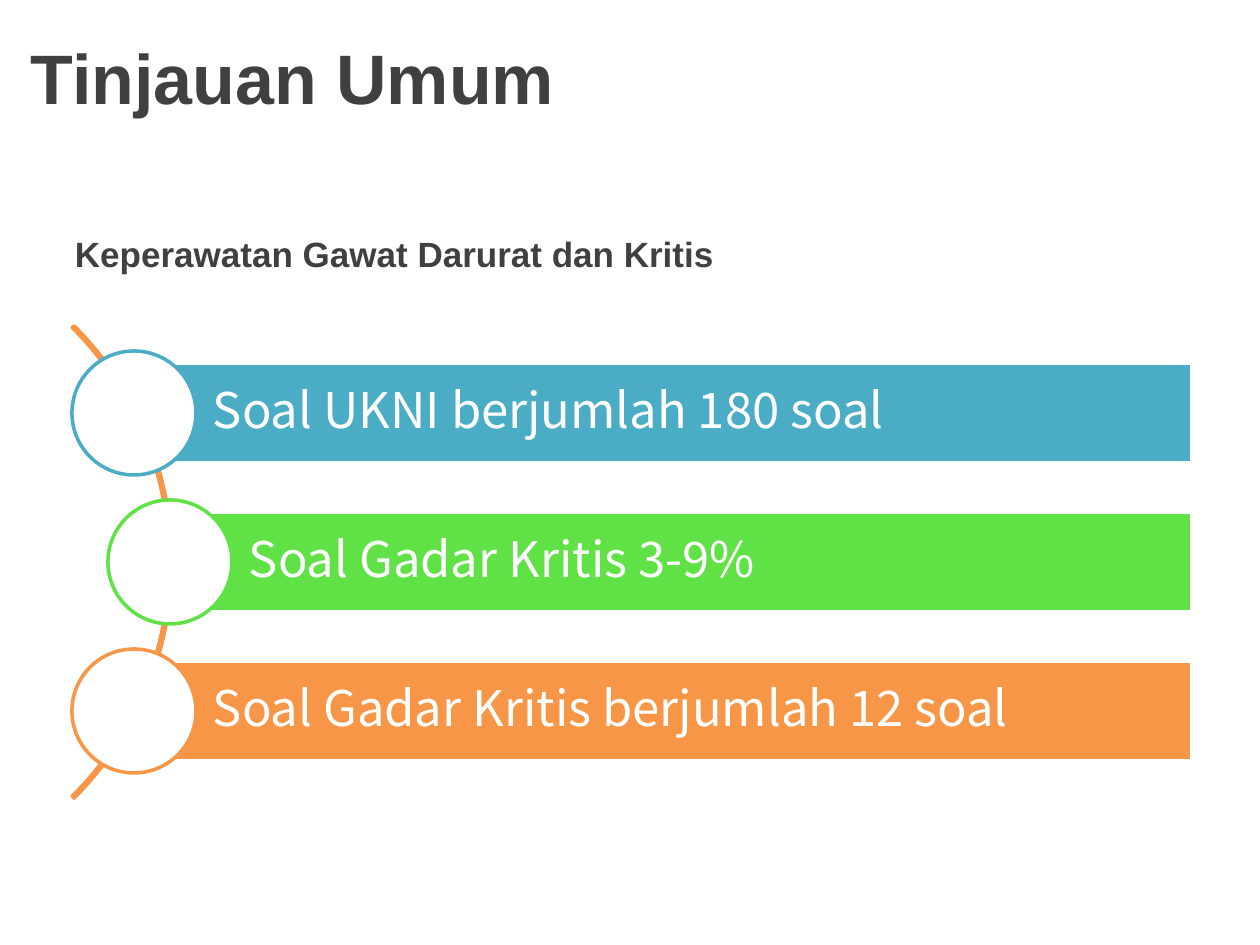
"""Build the overview slide with three facts strung along an arc."""
from pptx import Presentation
from pptx.dml.color import RGBColor
from pptx.enum.shapes import MSO_SHAPE
from pptx.enum.text import MSO_ANCHOR, PP_ALIGN
from pptx.util import Emu, Pt

ARC, BAR, CIRCLE = MSO_SHAPE.BLOCK_ARC, MSO_SHAPE.RECTANGLE, MSO_SHAPE.OVAL
MIDDLE, LEFT = MSO_ANCHOR.MIDDLE, PP_ALIGN.LEFT
EMU_PER_PX = 914400 / 126
COLORS = {"text": "404040", "white": "FFFFFF", "blue": "4BACC6",
          "green": "60E146", "orange": "F79646"}


def px(*lengths):
    return [Emu(round(length * EMU_PER_PX)) for length in lengths]


def write(shape, text, size, font, color, inset, bold=False):
    frame = shape.text_frame
    frame.word_wrap = True
    frame.vertical_anchor = MIDDLE
    frame.margin_left, frame.margin_right = px(inset, 10)
    frame.margin_top, frame.margin_bottom = px(6, 6)
    paragraph = frame.paragraphs[0]
    paragraph.alignment = LEFT
    run = paragraph.add_run()
    run.text = text
    run.font.size = Pt(size)
    run.font.name = font
    run.font.bold = bold
    run.font.color.rgb = RGBColor.from_string(COLORS[color])
    return paragraph


presentation = Presentation()
presentation.slide_width, presentation.slide_height = px(1260, 945)
slide = presentation.slides.add_slide(presentation.slide_layouts[6])
shapes = slide.shapes

title = shapes.add_textbox(*px(0, 3, 1260, 147))
write(title, "Tinjauan Umum", 40, "Arial", "text", 31, True)
subtitle = shapes.add_textbox(*px(63, 222, 1134, 63))
write(subtitle, "Keperawatan Gawat Darurat dan Kritis", 20, "Arial", "text", 12, True)

arc = shapes.add_shape(ARC, *px(-496, 228, 668, 668))
for index, value in enumerate((189, 27, 0.004)):
    arc.adjustments[index] = value
arc.shadow.inherit = False
arc.fill.background()
arc.line.color.rgb = RGBColor.from_string(COLORS["orange"])
arc.line.width = Pt(2)

FACTS = [
    ("Soal UKNI berjumlah 180 soal", "blue", 134),
    ("Soal Gadar Kritis 3-9%", "green", 170),
    ("Soal Gadar Kritis berjumlah 12 soal", "orange", 134),
]
FIRST_CENTER, PITCH, BAR_RIGHT = 413, 149, 1192
BAR_HEIGHT, DIAMETER = 100, 124

for row, (text, color, center_x) in enumerate(FACTS):
    center_y = FIRST_CENTER + row * PITCH
    bar = shapes.add_shape(BAR, *px(center_x, center_y - BAR_HEIGHT // 2,
                                    BAR_RIGHT - center_x, BAR_HEIGHT))
    circle = shapes.add_shape(CIRCLE, *px(center_x - DIAMETER // 2,
                                          center_y - DIAMETER // 2,
                                          DIAMETER, DIAMETER))
    for shape, fill, line in ((bar, color, "white"), (circle, "white", color)):
        shape.shadow.inherit = False
        shape.fill.solid()
        shape.fill.fore_color.rgb = RGBColor.from_string(COLORS[fill])
        shape.line.color.rgb = RGBColor.from_string(COLORS[line])
        shape.line.width = Pt(2)
    paragraph = write(bar, text, 28, "Noto Sans CJK KR", "white", 79)
    paragraph.line_spacing = 0.9

presentation.save("out.pptx")
